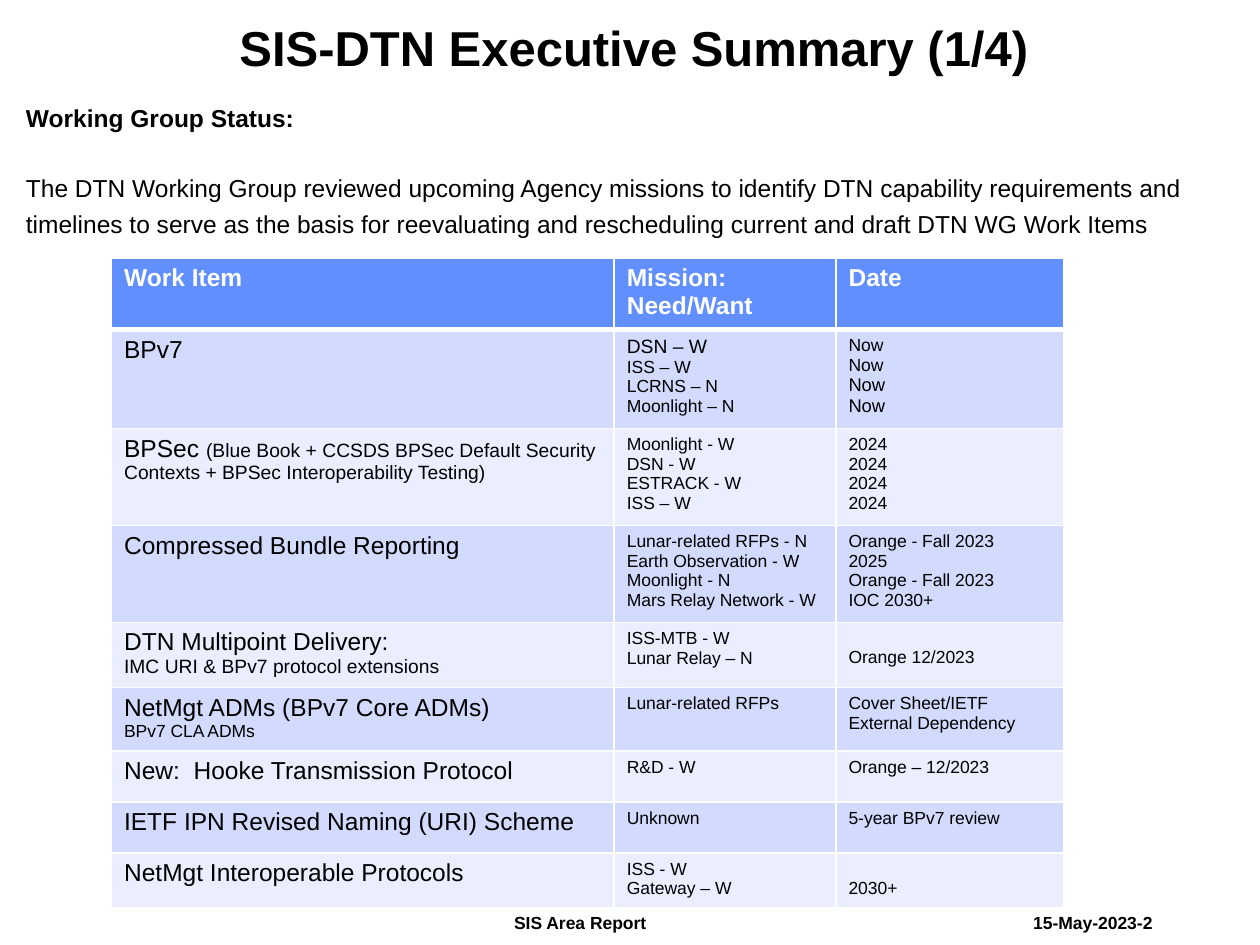
from lxml import etree
from pptx import Presentation
from pptx import util as u
from pptx.dml.color import RGBColor
from pptx.enum import text
from pptx.oxml.ns import qn

COLORS = {"ink": "000000", "white": "FFFFFF", "header": "618FFD",
          "odd": "D2DBFE", "even": "EAEEFF"}

prs = Presentation()
prs.slide_width, prs.slide_height = u.Inches(10), u.Inches(7.5)
slide = prs.slides.add_slide(prs.slide_layouts[6])

# Layout grid: 100 columns by 75 rows
COL, ROW = prs.slide_width / 100, prs.slide_height / 75


def write(tf, paras, color="ink", bold=False):
    """Fill a text frame; each paragraph is a list of (text, size) runs."""
    tf.word_wrap = True
    for i, runs in enumerate(paras):
        p = tf.paragraphs[0] if i == 0 else tf.add_paragraph()
        p.alignment = text.PP_ALIGN.LEFT
        p.font.name, p.font.bold = "Arial", bold
        p.font.size = u.Pt(runs[0][1])
        p.font.color.rgb = RGBColor.from_string(COLORS[color])
        for words, size in runs:
            r = p.add_run()
            r.text = words
            if size != runs[0][1]:
                r.font.size = u.Pt(size)


def add_panel(x, y, w, h, paras, bold=False):
    """Draw an unfilled outline on the grid that holds text."""
    builder = slide.shapes.build_freeform(int(x * COL), int(y * ROW))
    corners = [(x + w, y), (x + w, y + h), (x, y + h)]
    builder.add_line_segments([(int(cx * COL), int(cy * ROW)) for cx, cy in corners])
    sp = builder.convert_to_shape()
    sp.shadow.inherit = False
    sp.fill.background()
    sp.line.fill.background()
    tf = sp.text_frame
    tf.vertical_anchor = text.MSO_ANCHOR.TOP
    tf.margin_left = tf.margin_right = tf.margin_top = tf.margin_bottom = u.Inches(0.06)
    write(tf, paras, bold=bold)
    return tf


# Footer
for x, w, label in [(81.1, 12.3, "15-May-2023-2"), (39.9, 12.5, "SIS Area Report")]:
    sp = slide.shapes.add_textbox(int(x * COL), int(71.95 * ROW), int(w * COL), int(2.6 * ROW))
    tf = sp.text_frame
    tf.margin_left = tf.margin_right = u.Inches(0.09)
    tf.margin_top = tf.margin_bottom = u.Inches(0.04)
    write(tf, [[(label, 10)]], bold=True)
    tf.word_wrap = False

# Working group status
tf = add_panel(1.46, 7.12, 97, 66.5, [
    [("Working Group Status:", 14)],
    [("The DTN Working Group reviewed upcoming Agency missions to identify DTN capability "
      "requirements and timelines to serve as the basis for reevaluating and rescheduling "
      "current and draft DTN WG Work Items", 14)],
])
for p in tf.paragraphs:
    p.line_spacing = 1.2
tf.paragraphs[0].font.bold = True
tf.paragraphs[1].space_before = u.Pt(20)

# Title
tf = add_panel(9.7, 1.35, 77.3, 5.8, [[("SIS-DTN Executive Summary (1/4)", 28)]], bold=True)
tf.margin_left = u.Inches(0.45)
tf.paragraphs[0].alignment = text.PP_ALIGN.CENTER
tf.paragraphs[0].line_spacing = 0.9

# Work items: row height, item paragraphs, missions, dates, date lines skipped
items = [
    (7.83, [[("BPv7", 14)]],
     ["DSN – W", "ISS – W", "LCRNS – N", "Moonlight – N"], ["Now"] * 4, 0),
    (7.7, [[("BPSec ", 14), ("(Blue Book + CCSDS BPSec Default Security Contexts + "
                             "BPSec Interoperability Testing)", 11)]],
     ["Moonlight - W", "DSN - W", "ESTRACK - W", "ISS – W"], ["2024"] * 4, 0),
    (7.65, [[("Compressed Bundle Reporting", 14)]],
     ["Lunar-related RFPs - N", "Earth Observation - W", "Moonlight - N",
      "Mars Relay Network - W"],
     ["Orange - Fall 2023", "2025", "Orange - Fall 2023", "IOC 2030+"], 0),
    (5.15, [[("DTN Multipoint Delivery:", 14)], [("IMC URI & BPv7 protocol extensions", 11)]],
     ["ISS-MTB - W", "Lunar Relay – N"], ["Orange 12/2023"], 1),
    (5.03, [[("NetMgt ADMs (BPv7 Core ADMs)", 14)], [("BPv7 CLA ADMs", 10)]],
     ["Lunar-related RFPs"], ["Cover Sheet/IETF External Dependency"], 0),
    (4.05, [[("New:  Hooke Transmission Protocol", 14)]], ["R&D - W"], ["Orange – 12/2023"], 0),
    (4.05, [[("IETF IPN Revised Naming (URI) Scheme", 14)]],
     ["Unknown"], ["5-year BPv7 review"], 0),
    (4.3, [[("NetMgt Interoperable Protocols", 14)]],
     ["ISS - W", "Gateway – W"], ["2030+"], 1),
]
heights = [5.55] + [item[0] for item in items]
widths = [39.9, 17.6, 18.1]
table = slide.shapes.add_table(len(heights), len(widths), int(8.85 * COL), int(20.5 * ROW),
                               int(sum(widths) * COL), int(sum(heights) * ROW)).table
for column, w in zip(table.columns, widths):
    column.width = int(w * COL)
for row, h in zip(table.rows, heights):
    row.height = int(h * ROW)

# Cell borders and fills
for i, row in enumerate(table.rows):
    for cell in row.cells:
        tcPr = cell._tc.get_or_add_tcPr()
        for side in "LRTB":
            thick = (i, side) in [(0, "B"), (1, "T")]
            ln = etree.SubElement(tcPr, qn("a:ln" + side), w=str(u.Pt(3 if thick else 1)))
            fill = etree.SubElement(ln, qn("a:solidFill"))
            etree.SubElement(fill, qn("a:srgbClr"), val=COLORS["white"])
        cell.fill.solid()
        name = "header" if i == 0 else "odd" if i % 2 else "even"
        cell.fill.fore_color.rgb = RGBColor.from_string(COLORS[name])

# Cell text
for j, label in enumerate(["Work Item", "Mission: Need/Want", "Date"]):
    write(table.cell(0, j).text_frame, [[(label, 14)]], "white", bold=True)
for i, (_, item, missions, dates, skipped) in enumerate(items, 1):
    write(table.cell(i, 0).text_frame, item)
    for j, lines in enumerate([missions, dates], 1):
        write(table.cell(i, j).text_frame, [[(line, 10)] for line in lines])
    table.cell(i, 2).margin_top = u.Inches(0.05 + 0.155 * skipped)

# Slightly larger lines in the first row
table.cell(1, 1).text_frame.paragraphs[0].font.size = u.Pt(11)
for p in table.cell(1, 2).text_frame.paragraphs[2:]:
    p.font.size = u.Pt(10.5)

prs.save("out.pptx")
